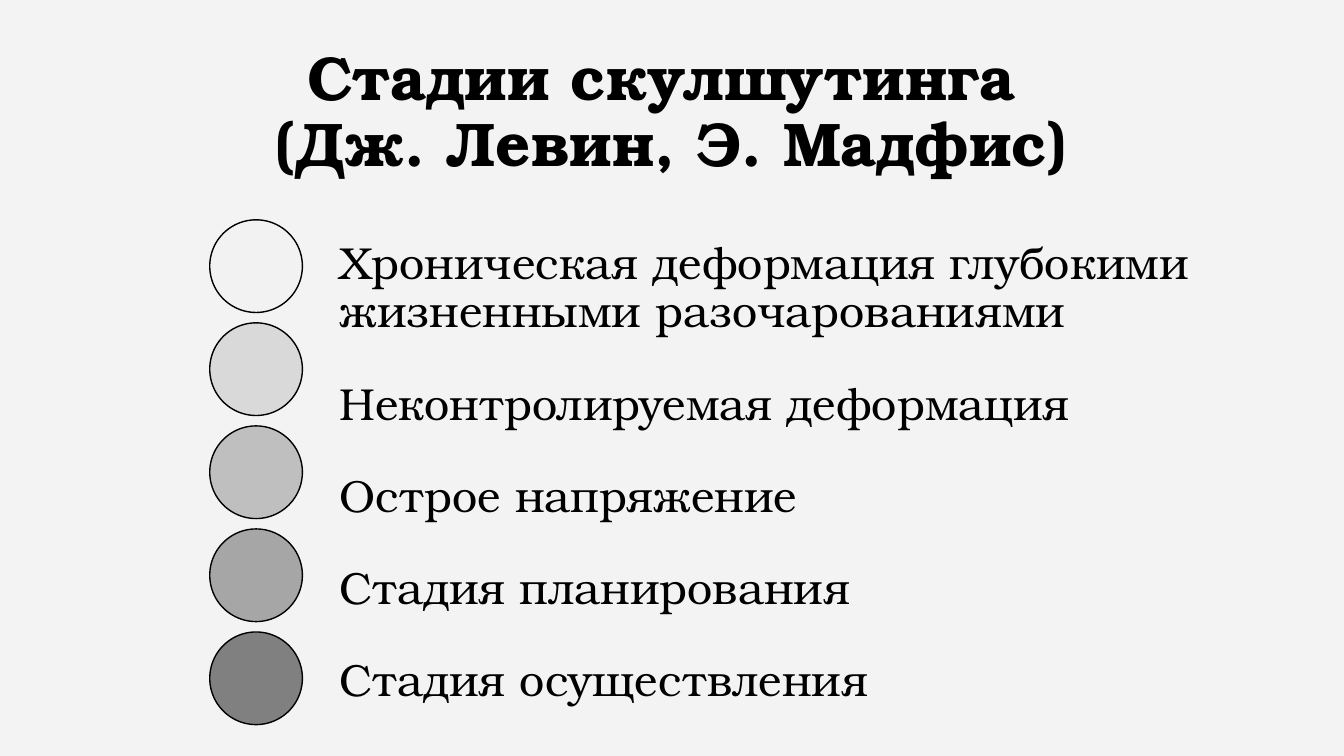
from dataclasses import dataclass

from pptx import Presentation
from pptx.dml.color import RGBColor
from pptx.enum.shapes import MSO_SHAPE
from pptx.enum.text import MSO_ANCHOR, PP_ALIGN
from pptx.slide import Slide
from pptx.util import Pt


@dataclass(frozen=True)
class Theme:
    background: str = "F3F3F3"
    ink: str = "000000"
    font: str = "TeX Gyre Bonum"
    heading_size: float = 44
    stage_size: float = 32
    line_spacing: float = 0.9
    stage_gap: float = 31.2


@dataclass(frozen=True)
class Box:
    left: float
    top: float
    width: float
    height: float

    def lengths(self) -> tuple[Pt, Pt, Pt, Pt]:
        return Pt(self.left), Pt(self.top), Pt(self.width), Pt(self.height)


@dataclass(frozen=True)
class Stage:
    text: str
    shade: str


THEME = Theme()
HEADING = "Стадии скулшутинга \v(Дж. Левин, Э. Мадфис)"
STAGES = [
    Stage("Хроническая деформация глубокими жизненными разочарованиями", "F2F2F2"),
    Stage("Неконтролируемая деформация", "D9D9D9"),
    Stage("Острое напряжение", "BFBFBF"),
    Stage("Стадия планирования", "A6A6A6"),
    Stage("Стадия осуществления", "808080"),
]
HEADING_BOX = Box(66, 28.8, 828, 104.4)
STAGES_BOX = Box(235.4, 168.5, 696.2, 365)
FIRST_CIRCLE = Box(149.8, 157, 66.2, 66.2)
CIRCLE_PITCH = 73.6


def add_text(slide: Slide, box: Box, lines: list[str], size: float, bold: bool,
             align: PP_ALIGN, anchor: MSO_ANCHOR, gap: float = 0) -> None:
    """Add a wrapped text box with one paragraph per line."""
    frame = slide.shapes.add_textbox(*box.lengths()).text_frame
    frame.word_wrap = True
    frame.vertical_anchor = anchor
    font_format = {"name": THEME.font, "size": Pt(size), "bold": bold}
    for index, line in enumerate(lines):
        paragraph = frame.add_paragraph() if index else frame.paragraphs[0]
        paragraph.text = line
        paragraph.alignment = align
        paragraph.line_spacing = THEME.line_spacing
        paragraph.space_before = Pt(gap if index else 0)
        for run in paragraph.runs:
            for attribute, value in font_format.items():
                setattr(run.font, attribute, value)
            run.font.color.rgb = RGBColor.from_string(THEME.ink)


def add_circle(slide: Slide, box: Box, shade: str) -> None:
    """Add an outlined circle filled with the shade of its stage."""
    circle = slide.shapes.add_shape(MSO_SHAPE.OVAL, *box.lengths())
    circle.shadow.inherit = False
    circle.fill.solid()
    circle.fill.fore_color.rgb = RGBColor.from_string(shade)
    circle.line.color.rgb = RGBColor.from_string(THEME.ink)
    circle.line.width = Pt(1)


def main() -> None:
    presentation = Presentation()
    presentation.slide_width, presentation.slide_height = Pt(960), Pt(540)
    slide = presentation.slides.add_slide(presentation.slide_layouts[6])
    slide.background.fill.solid()
    slide.background.fill.fore_color.rgb = RGBColor.from_string(THEME.background)

    # Heading
    add_text(slide, HEADING_BOX, [HEADING], THEME.heading_size, True,
             PP_ALIGN.CENTER, MSO_ANCHOR.MIDDLE)

    # Stage names
    add_text(slide, STAGES_BOX, [stage.text for stage in STAGES], THEME.stage_size,
             False, PP_ALIGN.LEFT, MSO_ANCHOR.TOP, THEME.stage_gap)

    # Circles darkening from the first stage to the last
    for index, stage in enumerate(STAGES):
        top = FIRST_CIRCLE.top + index * CIRCLE_PITCH
        add_circle(slide, Box(FIRST_CIRCLE.left, top, FIRST_CIRCLE.width,
                              FIRST_CIRCLE.height), stage.shade)

    presentation.save("out.pptx")


if __name__ == "__main__":
    main()
